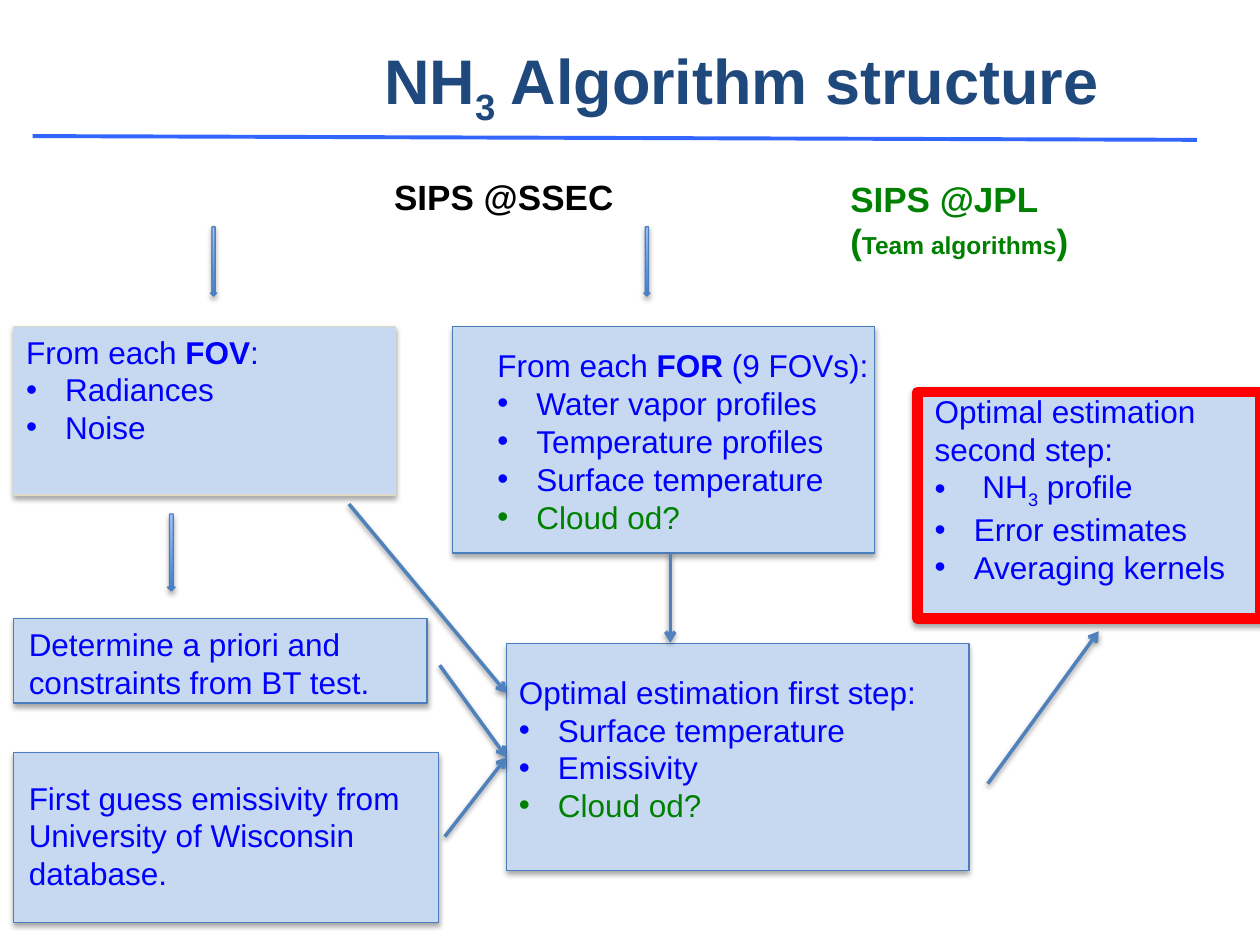
from lxml.etree import SubElement
from pptx import Presentation
from pptx.dml.color import RGBColor
from pptx.enum.shapes import MSO_CONNECTOR as Connector, MSO_SHAPE as Shape
from pptx.enum.text import MSO_ANCHOR as Anchor, PP_ALIGN as Align
from pptx.oxml.ns import qn
from pptx.util import Inches, Pt

COLORS = {
    "title": "1F497D", "rule": "3366FF", "box": "C6D9F1", "edge": "4B7EBC",
    "sand": "DDD9C3", "red": "FF0000", "arrow": "4F81BD", "dark": "3F80CE",
    "light": "A4C4FF", "blue": "0000FF", "green": "008000", "black": "000000",
}
FONT = "Arial"
BULLET_INDENT = Inches(0.31)
OPEN_QUESTION = ["Cloud od?"]


def color(name):
    return RGBColor.from_string(COLORS[name])


def add_shadow(shape, alpha, distance):
    effects = SubElement(shape._element.spPr, qn("a:effectLst"))
    shadow = SubElement(effects, qn("a:outerShdw"), blurRad=str(Pt(3.1)),
                        dist=str(Pt(distance)), dir="5400000", rotWithShape="0")
    tint = SubElement(shadow, qn("a:srgbClr"), val=COLORS["black"])
    SubElement(tint, qn("a:alpha"), val=str(alpha * 1000))


def add_spans(para, spans):
    """Each span is a text, or a (text, style) pair: bold, sub or a size."""
    for item in spans:
        text, style = (item, None) if isinstance(item, str) else item
        span = para.add_run()
        span.text = text
        if style == "bold":
            span.font.bold = True
        elif style == "sub":
            span.font._element.set("baseline", "-25000")
        elif style:
            span.font.size = Pt(style)


def set_font(para, size, name, bold=False):
    para.font.name = FONT
    para.font.size = Pt(size)
    para.font.bold = bold
    para.font.color.rgb = color(name)


def add_text(page, box, lines, bullets=(), size=18, name="blue", bold=False):
    frame = page.shapes.add_textbox(*map(Inches, box)).text_frame
    frame.word_wrap = True
    rows = [(line, False) for line in lines] + [(line, True) for line in bullets]
    for index, (spans, bulleted) in enumerate(rows):
        para = frame.paragraphs[0] if index == 0 else frame.add_paragraph()
        if bulleted:
            props = para._p.get_or_add_pPr()
            props.set("marL", str(BULLET_INDENT))
            props.set("indent", str(-BULLET_INDENT))
            SubElement(props, qn("a:buFont"), typeface=FONT)
            SubElement(props, qn("a:buChar"), char="•")
        add_spans(para, spans)
        set_font(para, size, "green" if spans == OPEN_QUESTION else name, bold)
        if spans == OPEN_QUESTION:  # the bullet takes the colour of its run
            para.runs[0].font.color.rgb = color("green")


def add_panel(page, box, edge="edge", width=0.75):
    panel = page.shapes.add_shape(Shape.RECTANGLE, *map(Inches, box))
    panel.fill.solid()
    panel.fill.fore_color.rgb = color("box")
    panel.line.color.rgb = color(edge)
    panel.line.width = Pt(width)
    add_shadow(panel, 35, 1.8)
    return panel


def add_block_arrow(page, box):
    arrow = page.shapes.add_shape(Shape.DOWN_ARROW, *map(Inches, box))
    arrow.fill.gradient()
    arrow.fill.gradient_angle = 90
    for stop, name in zip(arrow.fill.gradient_stops, ("dark", "light")):
        stop.color.rgb = color(name)
    arrow.line.color.rgb = color("edge")
    arrow.line.width = Pt(0.75)
    add_shadow(arrow, 35, 1.8)


def add_line(page, start, end, name, width):
    line = page.shapes.add_connector(Connector.STRAIGHT, *map(Inches, start + end))
    line.line.color.rgb = color(name)
    line.line.width = Pt(width)
    return line


def add_arrow(page, start, end, target=None):
    arrow = add_line(page, start, end, "arrow", 2)
    SubElement(arrow.line._get_or_add_ln(), qn("a:tailEnd"), type="arrow")
    add_shadow(arrow, 38, 1.6)
    if target is not None:
        arrow.end_connect(target, 1)


def add_header(page, box):
    rule = add_line(page, (0.26, 1.08), (9.5, 1.11), "rule", 2.25)
    SubElement(rule._element.spPr, qn("a:effectLst"))
    title = page.shapes.title
    title.left, title.top, title.width, title.height = map(Inches, box)
    title.text_frame.vertical_anchor = Anchor.MIDDLE
    para = title.text_frame.paragraphs[0]
    para.alignment = Align.CENTER
    add_spans(para, ["NH", ("3", "sub"), " Algorithm structure"])
    set_font(para, 36, "title", True)


def add_sources(page):
    add_text(page, (3.03, 1.34, 2.07, 0.44), [["SIPS @SSEC"]],
             size=20, name="black", bold=True)
    add_text(page, (6.65, 1.36, 2.8, 0.77),
             [["SIPS @JPL"], ["(", ("Team algorithms", 14), ")"]],
             size=20, name="green", bold=True)
    for box in ((1.67, 1.8, 0.05, 0.55), (5.11, 1.8, 0.05, 0.55),
                (1.33, 4.08, 0.06, 0.61)):
        add_block_arrow(page, box)


def add_inputs(page):
    # Field of view
    add_panel(page, (0.11, 2.59, 3.03, 1.34), "sand")
    add_text(page, (0.11, 2.59, 3.03, 1.01),
             [["From each ", ("FOV", "bold"), ":"]], [["Radiances"], ["Noise"]])
    # Field of regard
    add_panel(page, (3.59, 2.59, 3.35, 1.8))
    add_text(page, (3.85, 2.7, 3.46, 1.93),
             [["From each ", ("FOR", "bold"), " (9 FOVs):"]],
             [["Water vapor profiles"], ["Temperature profiles"],
              ["Surface temperature"], OPEN_QUESTION])
    # Prior knowledge
    add_panel(page, (0.11, 4.91, 3.28, 0.67))
    add_text(page, (0.13, 4.91, 3.29, 0.71),
             [["Determine a priori and constraints from BT test."]])
    add_panel(page, (0.11, 5.97, 3.37, 1.35))
    add_text(page, (0.13, 6.13, 3.29, 1.01),
             [["First guess emissivity from University of Wisconsin database."]])


def add_estimation(page):
    first_step = add_panel(page, (4.02, 5.11, 3.67, 1.8))
    add_text(page, (4.02, 5.29, 3.49, 1.32), [["Optimal estimation first step:"]],
             [["Surface temperature"], ["Emissivity"], OPEN_QUESTION])
    add_panel(page, (7.28, 3.11, 2.72, 1.8), "red", 6)
    add_text(page, (7.32, 3.06, 2.68, 1.62), [["Optimal estimation second step:"]],
             [[" NH", ("3", "sub"), " profile"], ["Error estimates"],
              ["Averaging kernels"]])
    # Flow between the steps
    add_arrow(page, (3.49, 5.28), (4.02, 6.01), first_step)
    add_arrow(page, (3.53, 6.64), (4.02, 6.01), first_step)
    add_arrow(page, (5.32, 4.39), (5.32, 5.1))
    add_arrow(page, (7.84, 6.22), (8.72, 5.01))
    add_arrow(page, (2.77, 4), (4.02, 5.5))


def main():
    deck = Presentation()
    deck.slide_width, deck.slide_height = Inches(10), Inches(7.5)
    page = deck.slides.add_slide(deck.slide_layouts[5])
    add_header(page, (1.77, 0, 8.23, 1.34))
    add_sources(page)
    add_inputs(page)
    add_estimation(page)
    deck.save("out.pptx")


if __name__ == "__main__":
    main()
